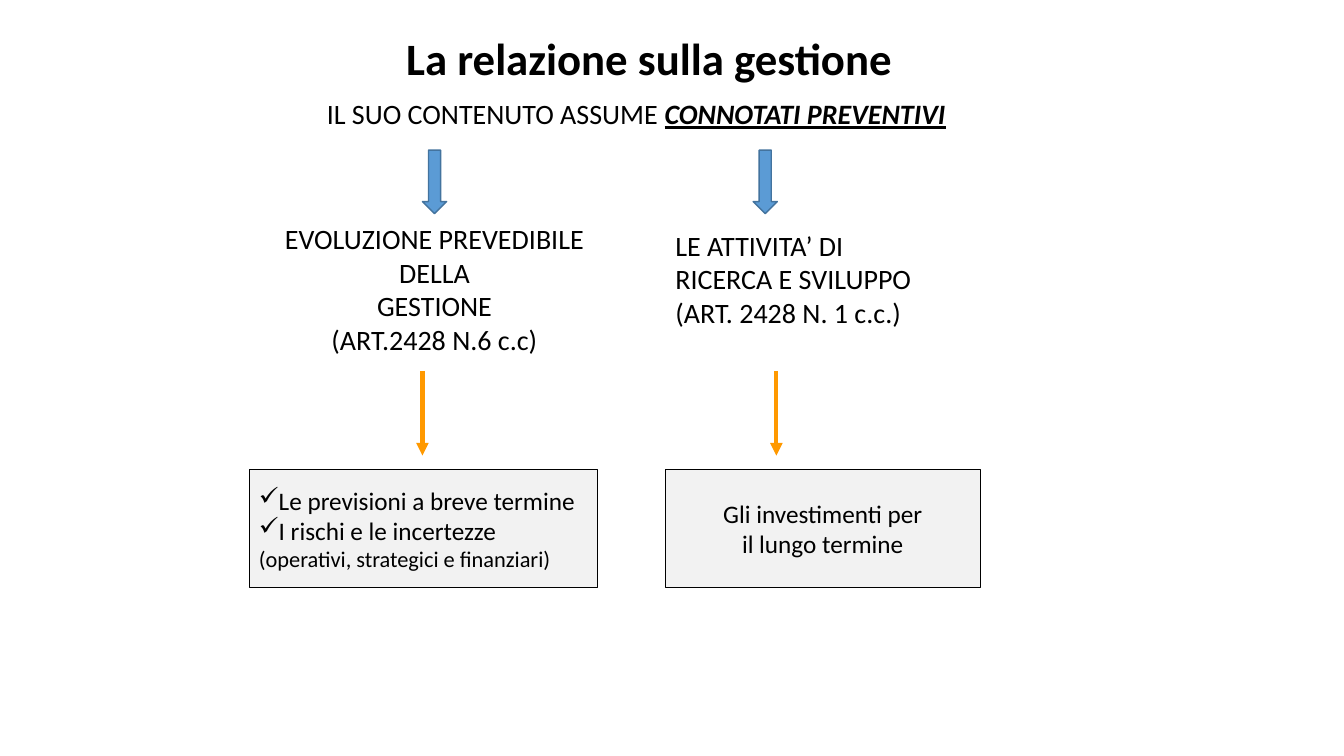
"""Builds the slide on the forward-looking content of the management report."""
import pptx
import pptx.dml.color
import pptx.enum.shapes
import pptx.enum.text
import pptx.oxml
import pptx.oxml.ns
import pptx.util

Inches, Pt = pptx.util.Inches, pptx.util.Pt
RGBColor = pptx.dml.color.RGBColor
Shape = pptx.enum.shapes.MSO_SHAPE
Align = pptx.enum.text.PP_ALIGN
Anchor = pptx.enum.text.MSO_ANCHOR

BLACK = RGBColor(0x00, 0x00, 0x00)
GREY = RGBColor(0xF2, 0xF2, 0xF2)
BLUE = RGBColor(0x5B, 0x9B, 0xD5)
DARK_BLUE = RGBColor(0x43, 0x73, 0x9E)
ORANGE = RGBColor(0xFF, 0x99, 0x00)


def apply(target, values):
    for name, value in values.items():
        setattr(target, name, value)


class ReportSlide:
    font = {"name": "Calibri", "bold": False}
    frame = {"word_wrap": True, "auto_size": pptx.enum.text.MSO_AUTO_SIZE.NONE}

    def __init__(self, deck):
        self.slide = deck.slides.add_slide(deck.slide_layouts[1])
        self.shapes = self.slide.shapes

    def fill_text(self, shape, lines, size, align, anchor=Anchor.MIDDLE):
        frame = shape.text_frame
        apply(frame, {**self.frame, "vertical_anchor": anchor})
        for index, line in enumerate(lines):
            paragraph = frame.add_paragraph() if index else frame.paragraphs[0]
            paragraph.alignment = align
            for text, style in line.get("runs", [(line.get("text"), {})]):
                run = paragraph.add_run()
                run.text = text
                apply(run.font, {**self.font, "size": Pt(line.get("size", size)), **style})
                run.font.color.rgb = BLACK
            self.bullet(paragraph, line.get("bullet"))

    def bullet(self, paragraph, mark):
        properties = paragraph._p.get_or_add_pPr()
        for name in ("marL", "indent"):
            properties.set(name, "0")
        tag = "a:buChar" if mark else "a:buNone"
        element = pptx.oxml.parse_xml(f"<{tag} {pptx.oxml.ns.nsdecls('a')}/>")
        if mark:
            element.set("char", mark)
        properties.append(element)

    def placeholder(self, index, area, lines, size, anchor):
        holder = self.slide.placeholders[index]
        apply(holder, dict(zip(("left", "top", "width", "height"), map(Inches, area))))
        self.fill_text(holder, lines, size, Align.CENTER, anchor)

    def label(self, area, lines, align):
        self.fill_text(self.shapes.add_textbox(*map(Inches, area)), lines, 20, align)

    def block(self, kind, area, fill, outline, width):
        block = self.shapes.add_shape(kind, *map(Inches, area))
        block.shadow.inherit = False
        block.fill.solid()
        block.fill.fore_color.rgb = fill
        block.line.color.rgb = outline
        block.line.width = Pt(width)
        return block

    def box(self, area, lines, align):
        self.fill_text(self.block(Shape.RECTANGLE, area, GREY, BLACK, 0.5), lines, 18, align)

    def arrow(self, x, top, bottom):
        arrow = self.shapes.add_connector(
            pptx.enum.shapes.MSO_CONNECTOR.STRAIGHT, *map(Inches, (x, top, x, bottom)))
        arrow.line.color.rgb = ORANGE
        arrow.line.width = Pt(3)
        namespace = pptx.oxml.ns.nsdecls("a")
        arrow.line._get_or_add_ln().append(
            pptx.oxml.parse_xml(f'<a:tailEnd {namespace} type="triangle"/>'))
        arrow._element.spPr.append(pptx.oxml.parse_xml(f"<a:effectLst {namespace}/>"))


def main():
    deck = pptx.Presentation()
    apply(deck, {"slide_width": Inches(13.33), "slide_height": Inches(7.5)})
    report = ReportSlide(deck)

    report.placeholder(0, (1.94, 0.34, 9, 0.46), [
        {"runs": [("La relazione sulla gestione", {"bold": True})]}], 32, Anchor.MIDDLE)
    emphasis = {"bold": True, "italic": True, "underline": True}
    report.placeholder(1, (1.81, 0.91, 9, 5.83), [
        {"runs": [("IL SUO CONTENUTO ASSUME ", {}), ("CONNOTATI PREVENTIVI", emphasis)]},
    ], 20, Anchor.TOP)

    report.label((2.31, 1.99, 4, 1.75), [
        {"text": "EVOLUZIONE PREVEDIBILE"}, {"text": "DELLA"},
        {"text": "GESTIONE"}, {"text": "(ART.2428 N.6 c.c)"}], Align.CENTER)
    report.label((6.6, 1.85, 3.92, 1.83), [
        {"text": "LE ATTIVITA’ DI"}, {"text": "RICERCA E SVILUPPO"},
        {"text": "(ART. 2428 N. 1 c.c.)"}], Align.LEFT)

    report.box((2.47, 4.66, 3.46, 1.17), [
        {"text": "Le previsioni a breve termine", "bullet": "✓"},
        {"text": "I rischi e le incertezze", "bullet": "✓"},
        {"text": "(operativi, strategici e finanziari)", "size": 16}], Align.LEFT)
    report.box((6.6, 4.66, 3.12, 1.17), [
        {"text": "Gli investimenti per"}, {"text": "il lungo termine"}], Align.CENTER)

    for block_left, arrow_x in ((4.19, 4.19), (7.47, 7.7)):
        report.arrow(arrow_x, 3.68, 4.52)
        report.block(Shape.DOWN_ARROW, (block_left, 1.49, 0.24, 0.63), BLUE, DARK_BLUE, 1)

    deck.save("out.pptx")


if __name__ == "__main__":
    main()
